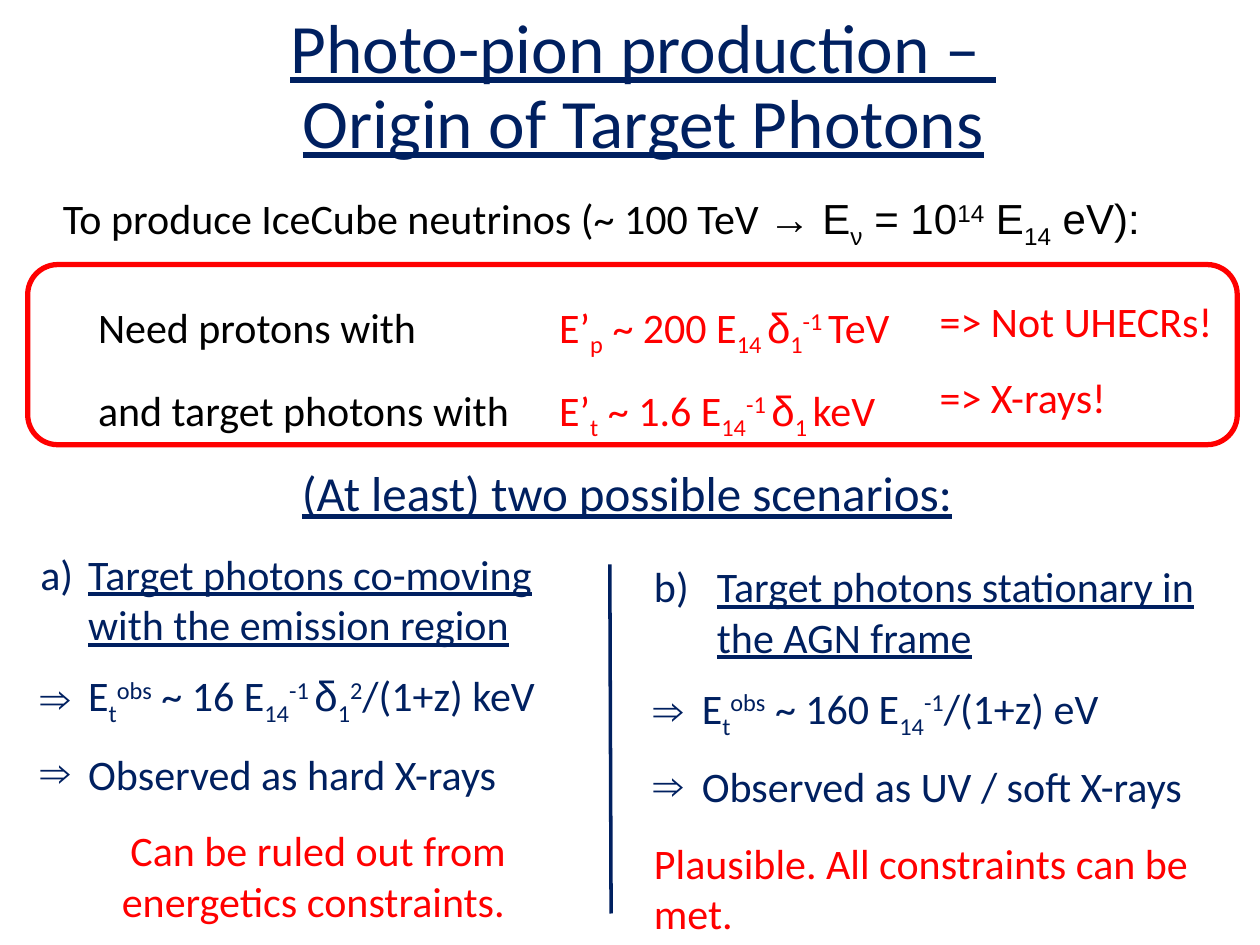
import pptx
import pptx.dml.color
import pptx.enum.shapes
import pptx.enum.text
import pptx.oxml
import pptx.oxml.ns
import pptx.util
from pptx.util import Inches

COLOURS = {"navy": "002060", "red": "FF0000", "black": "000000"}
BASELINES = {"_": "-25000", "^": "30000"}
ALIGN = pptx.enum.text.PP_ALIGN


def rgb(name):
    """Return the named colour."""
    return pptx.dml.color.RGBColor.from_string(COLOURS[name])


def add_runs(paragraph, markup, colour, size=24, underline=False, arial_from=None):
    """Write segments split by |, where _ lowers and ^ raises a segment."""
    for index, segment in enumerate(markup.split("|")):
        run = paragraph.add_run()
        run.text = segment.lstrip("_^")
        font = run.font
        is_arial = segment == "δ" or (arial_from is not None and index >= arial_from)
        font.name = "Arial" if is_arial else "Calibri"
        font.size = pptx.util.Pt(size)
        font.underline = underline
        font.color.rgb = rgb(colour)
        if segment[0] in BASELINES:
            run._r.get_or_add_rPr().set("baseline", BASELINES[segment[0]])


def add_text(slide, box, markup, colour, align=ALIGN.LEFT, **style):
    """Add a one-paragraph text box."""
    text_frame = slide.shapes.add_textbox(*map(Inches, box)).text_frame
    text_frame.word_wrap = True
    paragraph = text_frame.paragraphs[0]
    paragraph.alignment = align
    add_runs(paragraph, markup, colour, **style)


def set_bullet(paragraph, hanging, tag, **attributes):
    """Give a paragraph its hanging indent and bullet."""
    properties = paragraph._p.get_or_add_pPr()
    properties.set("marL", str(Inches(hanging)))
    properties.set("indent", str(-Inches(hanging)))
    bullet = pptx.oxml.parse_xml(f"<a:{tag} {pptx.oxml.ns.nsdecls('a')}/>")
    for name, value in attributes.items():
        bullet.set(name, value)
    properties.append(bullet)


def place(shape, box):
    """Move a shape to a box given in inches."""
    shape.left, shape.top, shape.width, shape.height = map(Inches, box)


def add_title(slide, box):
    """Fill and place the title."""
    title = slide.shapes.title
    place(title, box)
    text_frame = title.text_frame
    text_frame.auto_size = pptx.enum.text.MSO_AUTO_SIZE.NONE
    text_frame.text = "Photo-pion production – \vOrigin of Target Photons"
    paragraph = text_frame.paragraphs[0]
    paragraph.alignment = ALIGN.CENTER
    paragraph.line_spacing = 0.9
    for run in paragraph.runs:
        run.font.name = "Calibri"
        run.font.size = pptx.util.Pt(39.6)
        run.font.underline = True
        run.font.color.rgb = rgb("navy")


def add_requirements(slide, box):
    """Draw the framed energy requirements."""
    left, top, width, height = box
    rows = [
        (0.2, 0.24, "Need protons with", "E’|_p| ~ 200 E|_14 |δ|_1|^-1 |TeV", "=> Not UHECRs!"),
        (0.8, 0.9, "and target photons with", "E’|_t| ~ 1.6 E|_14|^-1 |δ|_1 |keV", "=> X-rays!"),
    ]
    for remark_top, row_top, label, formula, remark in rows:
        add_text(slide, (left + 0.46, top + row_top, 3.7, 0.5), label, "black")
        add_text(slide, (left + 4.12, top + row_top, 3.1, 0.5), formula, "red")
        add_text(slide, (left + 7.14, top + remark_top, 2.46, 0.5), remark, "red")
    frame = slide.shapes.add_shape(
        pptx.enum.shapes.MSO_SHAPE.ROUNDED_RECTANGLE, *map(Inches, box))
    frame.shadow.inherit = False
    frame.fill.background()
    frame.line.color.rgb = rgb("red")
    frame.line.width = pptx.util.Pt(3)


def add_scenario(placeholder, box, number, hanging, heading, findings, verdict, align):
    """Fill one scenario column: heading, findings and verdict."""
    place(placeholder, box)
    text_frame = placeholder.text_frame
    text_frame.auto_size = pptx.enum.text.MSO_AUTO_SIZE.NONE
    paragraphs = [text_frame.paragraphs[0]]
    paragraphs += [text_frame.add_paragraph() for _ in range(len(findings) + 1)]
    gaps = [0] + [12] * len(findings) + [15]
    for paragraph, gap in zip(paragraphs, gaps):
        paragraph.space_before = pptx.util.Pt(gap)
    add_runs(paragraphs[0], heading, "navy", underline=True)
    set_bullet(paragraphs[0], hanging, "buAutoNum", type="alphaLcParenR", startAt=str(number))
    for paragraph, finding in zip(paragraphs[1:], findings):
        add_runs(paragraph, finding, "navy")
        set_bullet(paragraph, 0.38, "buChar", char="⇒")
    paragraphs[-1].alignment = align
    add_runs(paragraphs[-1], verdict, "red")
    set_bullet(paragraphs[-1], 0, "buNone")


def add_divider(slide, start, end):
    """Draw the line between the scenarios."""
    line = slide.shapes.add_connector(
        pptx.enum.shapes.MSO_CONNECTOR.STRAIGHT, *map(Inches, start + end))
    line.line.color.rgb = rgb("navy")
    line.line.width = pptx.util.Pt(2)
    line._element.spPr.append(
        pptx.oxml.parse_xml(f"<a:effectLst {pptx.oxml.ns.nsdecls('a')}/>"))


def main():
    """Build and save the slide."""
    presentation = pptx.Presentation()
    presentation.slide_width = Inches(10)
    presentation.slide_height = Inches(7.5)
    slide = presentation.slides.add_slide(presentation.slide_layouts[3])
    add_title(slide, (0.66, 0.07, 8.89, 1.26))
    add_text(slide, (0.4, 1.48, 9.4, 0.5),
             "To produce IceCube neutrinos (~ 100 TeV |→ E|_ν| = 10|^14| E|_14| eV):",
             "black", arial_from=1)
    add_requirements(slide, (0.22, 2.1, 9.6, 1.43))
    add_text(slide, (0.4, 3.62, 9.15, 0.57), "(At least) two possible scenarios:",
             "navy", ALIGN.CENTER, size=28, underline=True)
    add_scenario(slide.placeholders[1], (0.22, 4.3, 4.61, 3.06), 1, 0.38,
                 "Target photons co-moving with the emission region",
                 ["E|_t|^obs| ~ 16 E|_14|^-1 |δ|_1|^2|/(1+z) keV", "Observed as hard X-rays"],
                 "Can be ruled out from energetics constraints. ", ALIGN.CENTER)
    add_scenario(slide.placeholders[2], (5.09, 4.4, 4.59, 3.06), 2, 0.5,
                 "Target photons stationary in the AGN frame",
                 ["E|_t|^obs| ~ 160 E|_14|^-1|/(1+z) eV", "Observed as UV / soft X-rays"],
                 "Plausible. All constraints can be met.", ALIGN.LEFT)
    add_divider(slide, (4.84, 4.48), (4.85, 7.25))
    presentation.save("out.pptx")


if __name__ == "__main__":
    main()
